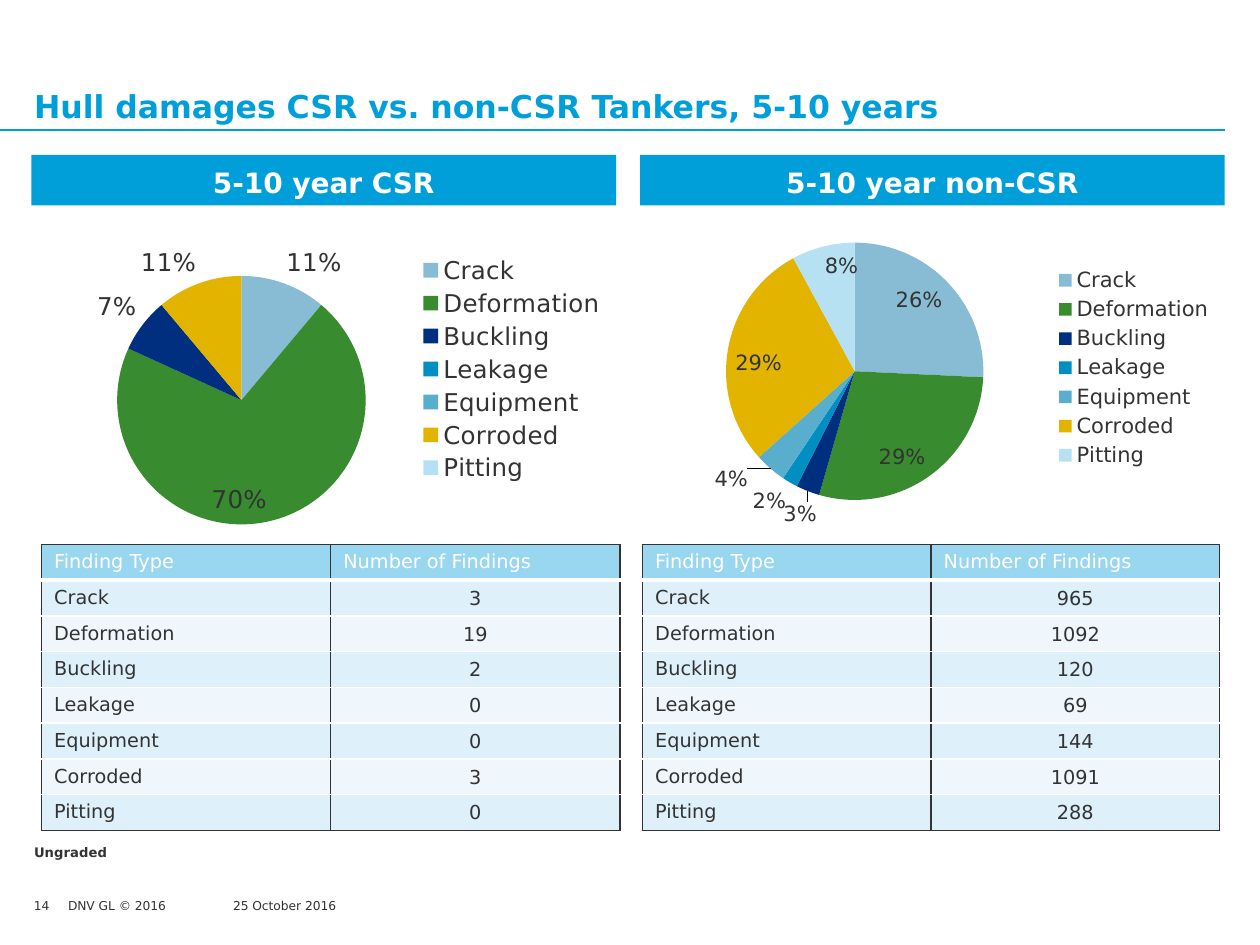
import pptx
import pptx.chart.data
import pptx.dml.color
import pptx.enum.chart
import pptx.enum.shapes
import pptx.enum.text
import pptx.oxml
import pptx.oxml.ns
import pptx.util
from pptx.util import Inches

COLORS = {
    "brand": "009FDA", "text": "333333", "white": "FFFFFF",
    "header": "99D6F0", "odd": "DEF0F9", "even": "EFF7FC",
    "Crack": "88BCD4", "Deformation": "388B2E", "Buckling": "002F80",
    "Leakage": "008EC3", "Equipment": "5AAECD", "Corroded": "E2B400",
    "Pitting": "B6E1F2",
}
FINDINGS = ["Crack", "Deformation", "Buckling", "Leakage", "Equipment", "Corroded", "Pitting"]
LABEL = pptx.enum.chart.XL_LABEL_POSITION
ALIGN = pptx.enum.text.PP_ALIGN
ANCHOR = pptx.enum.text.MSO_ANCHOR


def rgb(name):
    """Return the colour of a palette entry."""
    return pptx.dml.color.RGBColor.from_string(COLORS[name])


def manual_layout(target, **fractions):
    """Return a chart layout element with the given x, y, w and h fractions."""
    modes = "".join(f'<c:{axis}Mode val="edge"/>' for axis in "xy") if target != "label" else ""
    inner = '<c:layoutTarget val="inner"/>' if target == "plot" else ""
    sizes = "".join(f'<c:{key} val="{value}"/>' for key, value in fractions.items())
    return pptx.oxml.parse_xml(
        f'<c:layout {pptx.oxml.ns.nsdecls("c")}><c:manualLayout>{inner}{modes}{sizes}'
        "</c:manualLayout></c:layout>")


class FindingsSlide:
    """Holds the style and the current slide."""

    font = "DejaVu Sans"

    def __init__(self, presentation):
        """Add a title-only slide."""
        self.slide = presentation.slides.add_slide(presentation.slide_layouts[5])

    def style(self, font, size, color="text", bold=False):
        """Apply the typeface, size, colour and weight."""
        font.name, font.size, font.bold = self.font, pptx.util.Pt(size), bold
        font.color.rgb = rgb(color)

    def add_text(self, frame, text, size, color="text", bold=False, align=ALIGN.LEFT, spacing=None):
        """Add one run to the first paragraph of a frame."""
        paragraph = frame.paragraphs[0]
        paragraph.alignment = align
        paragraph.line_spacing = spacing
        run = paragraph.add_run()
        run.text = text
        self.style(run.font, size, color, bold)

    def bare(self, frame, wrap=True):
        """Remove the insets of a frame."""
        frame.margin_left = frame.margin_right = frame.margin_top = frame.margin_bottom = 0
        frame.word_wrap = wrap

    def title(self, text, left, top, width, height):
        """Place and fill the title."""
        title = self.slide.shapes.title
        title.left, title.top = Inches(left), Inches(top)
        title.width, title.height = Inches(width), Inches(height)
        frame = title.text_frame
        self.bare(frame)
        frame.auto_size = pptx.enum.text.MSO_AUTO_SIZE.NONE
        frame.vertical_anchor = ANCHOR.BOTTOM
        self.add_text(frame, text, 18, "brand", True)

    def rule(self, left, right, y):
        """Draw a horizontal rule."""
        line = self.slide.shapes.add_connector(
            pptx.enum.shapes.MSO_CONNECTOR.STRAIGHT,
            Inches(left), Inches(y), Inches(right), Inches(y))
        line.line.color.rgb = rgb("brand")
        line.line.width = pptx.util.Pt(1)
        line._element.spPr.append(
            pptx.oxml.parse_xml(f'<a:effectLst {pptx.oxml.ns.nsdecls("a")}/>'))

    def note(self, text, left, top, width, height, size=7, bold=False, wrap=True):
        """Add a small footer text."""
        box = self.slide.shapes.add_textbox(
            Inches(left), Inches(top), Inches(width), Inches(height))
        self.bare(box.text_frame, wrap)
        self.add_text(box.text_frame, text, size, bold=bold)

    def banner(self, text, left, top, width, height):
        """Add a filled heading bar."""
        bar = self.slide.shapes.add_shape(
            pptx.enum.shapes.MSO_SHAPE.RECTANGLE,
            Inches(left), Inches(top), Inches(width), Inches(height))
        bar.shadow.inherit = False
        bar.fill.solid()
        bar.fill.fore_color.rgb = rgb("brand")
        bar.line.fill.background()
        self.add_text(bar.text_frame, text, 16, "white", True, ALIGN.CENTER, 1.14)

    def cell(self, cell, text, row, column, last):
        """Fill, frame and label one table cell."""
        cell.fill.solid()
        cell.fill.fore_color.rgb = rgb("header" if row == 0 else "odd" if row % 2 else "even")
        borders = {
            "L": ("text", 1), "R": ("text", 1),
            "T": ("text" if row == 0 else "white", 3 if row == 1 else 1),
            "B": ("text" if row == last else "white", 3 if row == 0 else 1),
        }
        properties = cell._tc.get_or_add_tcPr()
        for index, (side, (color, width)) in enumerate(borders.items()):
            properties.insert(index, pptx.oxml.parse_xml(
                f'<a:ln{side} {pptx.oxml.ns.nsdecls("a")} w="{pptx.util.Pt(width)}"><a:solidFill>'
                f'<a:srgbClr val="{COLORS[color]}"/></a:solidFill></a:ln{side}>'))
        is_count = row > 0 and column == 1
        if is_count:
            cell.margin_left = cell.margin_right = cell.margin_top = Inches(0.01)
            cell.margin_bottom = 0
            cell.vertical_anchor = ANCHOR.MIDDLE
        self.add_text(cell.text_frame, text, 11, "text" if row else "white",
                      align=ALIGN.CENTER if is_count else ALIGN.LEFT)

    def table(self, counts, left, top, width, row_height):
        """Add a table of findings."""
        rows = [("Finding Type", "Number of Findings"), *zip(FINDINGS, map(str, counts))]
        table = self.slide.shapes.add_table(
            len(rows), 2, Inches(left), Inches(top),
            Inches(width), Inches(row_height * len(rows))).table
        table.first_row = table.horz_banding = False
        for row, texts in enumerate(rows):
            table.rows[row].height = Inches(row_height)
            for column, text in enumerate(texts):
                self.cell(table.cell(row, column), text, row, column, len(rows) - 1)

    def pie(self, shares, box, size, plot, legend, outside, shifts):
        """Add a pie chart of shares in percent."""
        data = pptx.chart.data.CategoryChartData(number_format='0"%";;;')
        data.categories = FINDINGS
        data.add_series("Series 1", shares)
        chart = self.slide.shapes.add_chart(
            pptx.enum.chart.XL_CHART_TYPE.PIE, *map(Inches, box), data).chart
        self.style(chart.font, size)
        chart.has_title = False
        chart.has_legend = True
        chart.legend.position = pptx.enum.chart.XL_LEGEND_POSITION.RIGHT
        chart.legend.include_in_layout = False
        self.style(chart.legend.font, size)
        pie = chart.plots[0]
        pie.vary_by_categories = True
        series = pie.series[0]
        labels = series.data_labels
        labels.show_value = True
        labels.number_format = '0"%";;;'
        labels.number_format_is_linked = False
        self.style(labels.font, size)
        for index, (finding, share) in enumerate(zip(FINDINGS, shares)):
            point = series.points[index]
            point.format.fill.solid()
            point.format.fill.fore_color.rgb = rgb(finding)
            if share:
                label = point.data_label
                self.style(label.font, size)
                label.position = LABEL.OUTSIDE_END if finding in outside else LABEL.INSIDE_END
            if finding in shifts:
                x, y = shifts[finding]
                element = chart.element.xpath(f'.//c:dLbl[c:idx/@val="{index}"]')[0]
                element.insert(1, manual_layout("label", x=x, y=y))
        for tag, target, place, position in (
                ("plotArea", "plot", plot, 0), ("legend", "legend", legend, 1)):
            part = chart.element.xpath(f".//c:{tag}")[0]
            for automatic in part.xpath("c:layout"):
                part.remove(automatic)
            part.insert(position, manual_layout(target, **dict(zip("xywh", place))))


def main():
    """Build the slide."""
    presentation = pptx.Presentation()
    presentation.slide_width, presentation.slide_height = Inches(10), Inches(7.5)
    page = FindingsSlide(presentation)
    page.title("Hull damages CSR vs. non-CSR Tankers, 5-10 years", 0.27, 0.26, 9.45, 0.73)
    page.rule(0, 9.72, 1.03)
    page.note("Ungraded", 0.27, 6.7, 3.11, 0.18, 7.5, True)
    page.note("14", 0.27, 7.13, 0.26, 0.2)
    page.note("DNV GL © 2016", 0.54, 7.13, 0.8, 0.12, wrap=False)
    page.note("25 October 2016", 1.85, 7.13, 3.07, 0.2)
    page.banner("5-10 year CSR", 0.25, 1.23, 4.64, 0.4)
    page.banner("5-10 year non-CSR", 5.08, 1.23, 4.64, 0.4)
    page.table([3, 19, 2, 0, 0, 3, 0], 0.33, 4.32, 4.59, 0.28)
    page.table([965, 1092, 120, 69, 144, 1091, 288], 5.1, 4.32, 4.58, 0.28)
    page.pie([26, 29, 3, 2, 4, 29, 8], (5.06, 1.54, 4.66, 2.76), 12,
             (0.15, 0.14, 0.44, 0.74), (0.7, 0.2, 0.29, 0.6),
             ["Buckling", "Leakage", "Equipment"],
             {"Buckling": (0.02, 0.01), "Equipment": (-0.03, -0.02)})
    page.pie([11, 70, 7, 0, 0, 11, 0], (0.28, 1.56, 4.61, 2.74), 14,
             (0.14, 0.23, 0.43, 0.72), (0.65, 0.16, 0.34, 0.68),
             ["Crack", "Buckling", "Corroded"], {})
    presentation.save("out.pptx")


if __name__ == "__main__":
    main()
